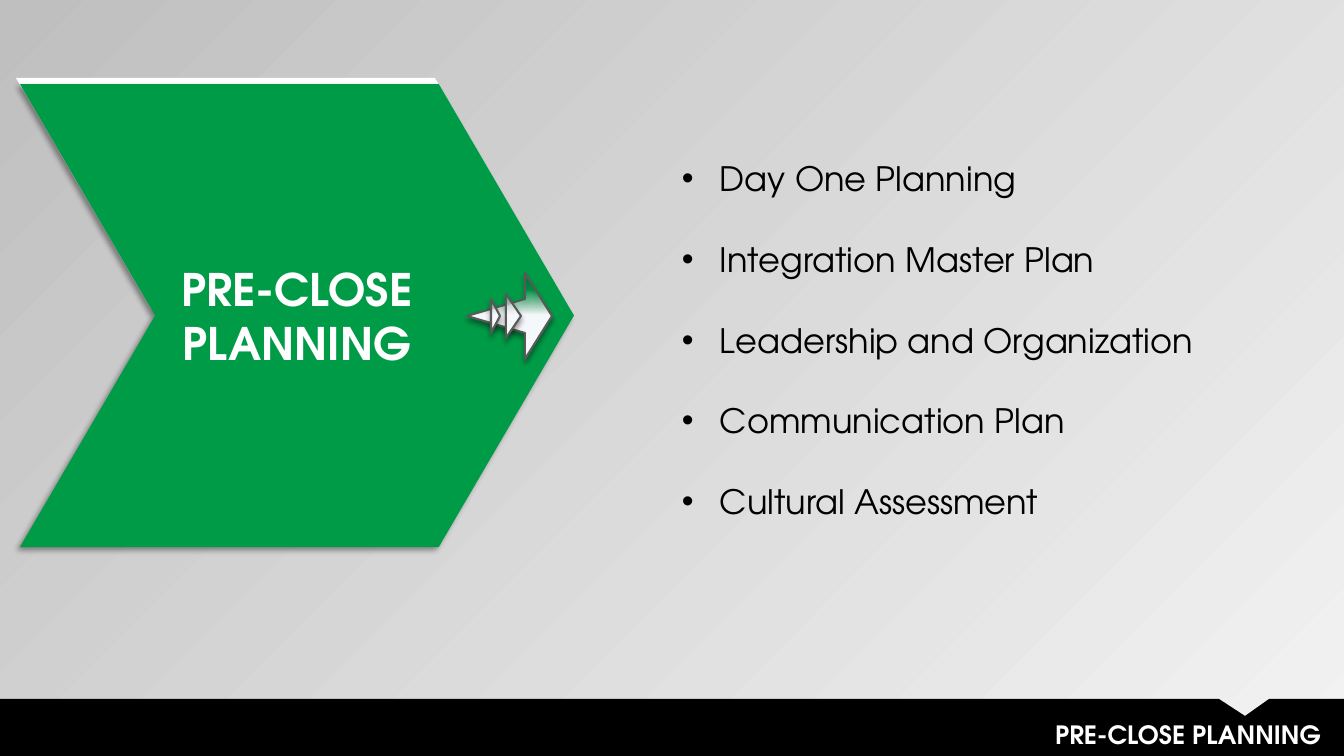
from lxml.etree import SubElement
from pptx import Presentation
from pptx.dml.color import RGBColor
from pptx.enum.shapes import MSO_SHAPE
from pptx.enum.text import MSO_ANCHOR, MSO_AUTO_SIZE, PP_ALIGN
from pptx.oxml import parse_xml
from pptx.oxml.ns import nsdecls, qn
from pptx.util import Pt

WIDTH, HEIGHT = 1344, 756
PX = 12192000 / WIDTH
FONT = "TeX Gyre Adventor"
WHITE = RGBColor(0xFF, 0xFF, 0xFF)
BLACK = RGBColor(0, 0, 0)
GREEN = RGBColor(0x00, 0x9B, 0x47)
ICE = RGBColor(0xF7, 0xFA, 0xFD)
OUTLINE = RGBColor(0x59, 0x59, 0x59)
LIGHT_GRAY = RGBColor(0xF2, 0xF2, 0xF2)
MID_GRAY = RGBColor(0xBF, 0xBF, 0xBF)
TOPICS = [
    "Day One Planning",
    "Integration Master Plan",
    "Leadership and Organization",
    "Communication Plan",
    "Cultural Assessment",
]


def px(length):
    return round(length * PX)


def set_gradient(fill, element, stops, angle):
    """Apply (position, colour, opacity) stops, in percent, at a counterclockwise angle."""
    fill.gradient()
    fill.gradient_angle = angle
    stop_list = next(element.iter(qn("a:gsLst")))
    for stop in list(stop_list):
        stop_list.remove(stop)
    for position, color, opacity in stops:
        stop = SubElement(stop_list, qn("a:gs"), pos=str(position * 1000))
        stop_color = SubElement(stop, qn("a:srgbClr"), val=str(color))
        SubElement(stop_color, qn("a:alpha"), val=str(opacity * 1000))


def add_shadow(shape, direction):
    shape._element.spPr.append(parse_xml(
        f'<a:effectLst {nsdecls("a")}><a:outerShdw blurRad="{Pt(4)}" dist="{Pt(3)}" '
        f'dir="{direction * 60000}" algn="ctr" rotWithShape="0"><a:srgbClr val="{BLACK}">'
        '<a:alpha val="40000"/></a:srgbClr></a:outerShdw></a:effectLst>'))


def add_outline(slide, points, color=None):
    """Draw a closed polygon without line or shadow."""
    builder = slide.shapes.build_freeform(*points[0], scale=PX)
    builder.add_line_segments(points[1:], close=True)
    shape = builder.convert_to_shape()
    shape.shadow.inherit = False
    shape.line.fill.background()
    if color is not None:
        shape.fill.solid()
        shape.fill.fore_color.rgb = color
    return shape


def write_text(shape, lines, size, color, bold=False, align=PP_ALIGN.LEFT,
               anchor=MSO_ANCHOR.TOP, spacing=1, bullet_indent=0):
    frame = shape.text_frame
    frame.word_wrap = True
    frame.auto_size = MSO_AUTO_SIZE.NONE
    frame.vertical_anchor = anchor
    frame.text = "\n".join(lines)
    for paragraph in frame.paragraphs:
        paragraph.alignment = align
        paragraph.line_spacing = float(spacing)
        font = paragraph.runs[0].font
        font.name, font.size, font.bold = FONT, Pt(size), bold
        font.color.rgb = color
        if bullet_indent:
            properties = paragraph._p.get_or_add_pPr()
            properties.set("marL", str(px(bullet_indent)))
            properties.set("indent", str(-px(bullet_indent)))
            SubElement(properties, qn("a:buFont"), typeface="Arial")
            SubElement(properties, qn("a:buChar"), char="•")


def add_chevron(slide, left, top, width, height):
    """Place the green chevron over a white one that shows as its top edge."""
    notch, middle = 135, top + height // 2
    edge = [(left, top), (left + width - notch, top), (left + width, middle),
            (left + width - notch, top + height), (left + notch, middle)]
    add_outline(slide, [(x - 4, y - 6) for x, y in edge], WHITE)
    chevron = slide.shapes.add_shape(
        MSO_SHAPE.CHEVRON, px(left), px(top), px(width), px(height))
    chevron.adjustments[0] = 0.292
    chevron.shadow.inherit = False
    chevron._element.spPr.remove(chevron._element.spPr.find(qn("a:effectLst")))
    chevron.fill.solid()
    chevron.fill.fore_color.rgb = GREEN
    chevron.line.fill.background()
    add_shadow(chevron, 135)
    write_text(chevron, ["PRE-CLOSE PLANNING"], 32, WHITE, bold=True,
               align=PP_ALIGN.CENTER, anchor=MSO_ANCHOR.MIDDLE)


def add_footer(slide, top, height):
    """Place the notched black bar with the slide title on it."""
    bottom = top + height
    add_outline(slide, [(0, top), (1219, top), (1245, top + 17), (1269, top),
                        (WIDTH, top), (WIDTH, bottom), (0, bottom)], BLACK)
    title = slide.shapes.title
    title.left, title.top = px(417), px(top + 15)
    title.width, title.height = px(914), px(40)
    slide.shapes._spTree.append(title._element)
    write_text(title, ["PRE-CLOSE PLANNING"], 18, WHITE, bold=True, align=PP_ALIGN.RIGHT)


def add_arrow_icon(slide, left, middle):
    """Place the long arrow and the two small heads on its tail."""
    base = left + 58
    arrow = [(base, middle + 43), (left + 85, middle), (base, middle - 43),
             (base, middle - 17), (left, middle), (base, middle + 17)]
    heads = [[(left + x, middle + half), (left + x + length, middle), (left + x, middle - half)]
             for x, length, half in ((39, 15, 22), (24, 9, 17))]
    for points, clear_at, opacity in ((arrow, 20, 0), (heads[0], 0, 20), (heads[1], 0, 20)):
        shape = add_outline(slide, points)
        set_gradient(shape.fill, shape._element,
                     [(clear_at, WHITE, opacity), (49, ICE, 100)], 270)
        shape.line.color.rgb = OUTLINE
        shape.line.width = Pt(1.47)
        shape._element.spPr.remove(shape._element.spPr.find(qn("a:effectLst")))
        add_shadow(shape, 90)


def add_topics(slide, left, top, width, height):
    box = slide.shapes.add_textbox(px(left), px(top), px(width), px(height))
    write_text(box, TOPICS, 24, BLACK, spacing=2, bullet_indent=38)


def main():
    presentation = Presentation()
    presentation.slide_width, presentation.slide_height = px(WIDTH), px(HEIGHT)
    slide = presentation.slides.add_slide(presentation.slide_layouts[5])
    set_gradient(slide.background.fill, slide._element,
                 [(0, LIGHT_GRAY, 100), (100, MID_GRAY, 100)], 135)
    add_chevron(slide, 20, 84, 554, 463)
    add_footer(slide, 699, 57)
    add_arrow_icon(slide, 467, 316)
    add_topics(slide, 672, 113, 623, 417)
    presentation.save("out.pptx")


if __name__ == "__main__":
    main()
